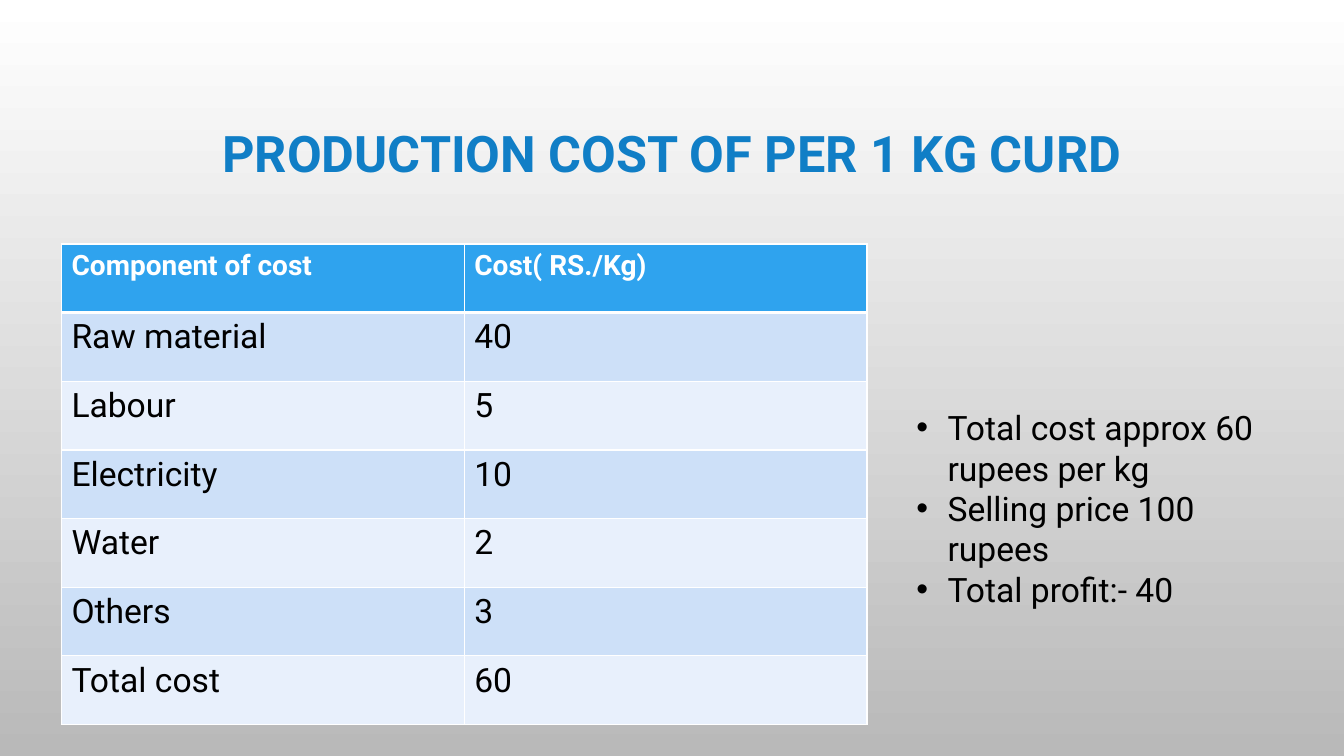
import pptx
import pptx.dml.color
import pptx.enum.text
import pptx.oxml
import pptx.oxml.ns
import pptx.util

RGB = pptx.dml.color.RGBColor
WHITE = RGB(0xFF, 0xFF, 0xFF)
BLACK = RGB(0x00, 0x00, 0x00)
GREY = RGB(0xB9, 0xB9, 0xB9)
TITLE_BLUE = RGB(0x10, 0x7E, 0xC6)
HEADER_BLUE = RGB(0x2F, 0xA3, 0xEE)
BANDS = [RGB(0xE8, 0xF0, 0xFC), RGB(0xCD, 0xE0, 0xF8)]
FONT = "Roboto"
WIDTH, HEIGHT = 13.33, 7.5

COSTS = [
    ("Component of cost", "Cost( RS./Kg)"),
    ("Raw material", "40"),
    ("Labour", "5"),
    ("Electricity", "10"),
    ("Water", "2"),
    ("Others", "3"),
    ("Total cost", "60"),
]
SUMMARY = [
    "Total cost approx 60 rupees per kg",
    "Selling price 100 rupees",
    "Total profit:- 40",
]


def element(tag, **attributes):
    e = pptx.oxml.parse_xml(f"<a:{tag} {pptx.oxml.ns.nsdecls('a')}/>")
    for name, value in attributes.items():
        e.set(name, str(value))
    return e


def write(p, text, size=24, color=BLACK, bold=False, align=None, spacing=None):
    """Put formatted text into a paragraph."""
    r = p.add_run()
    r.text = text
    r.font.name, r.font.size, r.font.bold = FONT, pptx.util.Pt(size), bold
    r.font.color.rgb = color
    p.alignment, p.line_spacing = align, spacing


class CostSlide:
    """Places elements by shares of the slide's width and height."""

    def __init__(self, prs):
        self.width, self.height = prs.slide_width, prs.slide_height
        self.s = prs.slides.add_slide(prs.slide_layouts[6])

    def box(self, x, y, w, h):
        return [int(x * self.width), int(y * self.height),
                int(w * self.width), int(h * self.height)]

    def background(self, top, bottom):
        fill = self.s.background.fill
        fill.gradient()
        fill.gradient_angle = 270
        for stop, color in zip(fill.gradient_stops, (top, bottom)):
            stop.color.rgb = color

    def text_frame(self, *place, anchor=pptx.enum.text.MSO_ANCHOR.TOP):
        tf = self.s.shapes.add_textbox(*self.box(*place)).text_frame
        tf.word_wrap, tf.vertical_anchor = True, anchor
        return tf

    def title(self, text, *place):
        tf = self.text_frame(*place, anchor=pptx.enum.text.MSO_ANCHOR.MIDDLE)
        write(tf.paragraphs[0], text, size=36, color=TITLE_BLUE, bold=True,
              align=pptx.enum.text.PP_ALIGN.CENTER, spacing=0.9)

    def bullets(self, items, *place):
        tf = self.text_frame(*place)
        indent = pptx.util.Inches(0.31)
        for i, item in enumerate(items):
            p = tf.add_paragraph() if i else tf.paragraphs[0]
            pPr = p._p.get_or_add_pPr()
            pPr.set("marL", str(indent))
            pPr.set("indent", str(-indent))
            pPr.append(element("buFont", typeface="Arial"))
            pPr.append(element("buChar", char="•"))
            write(p, item)

    def borders(self, cell, **widths):
        tcPr = cell._tc.get_or_add_tcPr()
        for side in "LRTB":
            line = element(f"ln{side}", w=pptx.util.Pt(widths.get(side, 1)))
            solid = element("solidFill")
            solid.append(element("srgbClr", val=WHITE))
            line.append(solid)
            tcPr.append(line)

    def table(self, rows, *place):
        table = self.s.shapes.add_table(
            len(rows), len(rows[0]), *self.box(*place)).table
        for i, row in enumerate(rows):
            header = i == 0
            for j, text in enumerate(row):
                cell = table.cell(i, j)
                # The rule below the header is thicker
                self.borders(cell, B=3 if header else 1, T=3 if i == 1 else 1)
                cell.fill.solid()
                cell.fill.fore_color.rgb = HEADER_BLUE if header else BANDS[i % 2]
                write(cell.text_frame.paragraphs[0], text, bold=header,
                      size=20 if header else 24,
                      color=WHITE if header else BLACK)


def main():
    prs = pptx.Presentation()
    prs.slide_width = pptx.util.Inches(WIDTH)
    prs.slide_height = pptx.util.Inches(HEIGHT)
    slide = CostSlide(prs)
    slide.background(WHITE, GREY)

    # Heading
    slide.title("PRODUCTION COST OF PER 1 KG CURD",
                1 / WIDTH, 0.67 / HEIGHT, 11.33 / WIDTH, 1.75 / HEIGHT)

    # Cost table and summary beside it
    slide.table(COSTS, 0.61 / WIDTH, 2.42 / HEIGHT, 7.99 / WIDTH, 4.77 / HEIGHT)
    slide.bullets(SUMMARY, 8.99 / WIDTH, 3.99 / HEIGHT, 3.74 / WIDTH, 2.1 / HEIGHT)

    prs.save("out.pptx")


if __name__ == "__main__":
    main()
